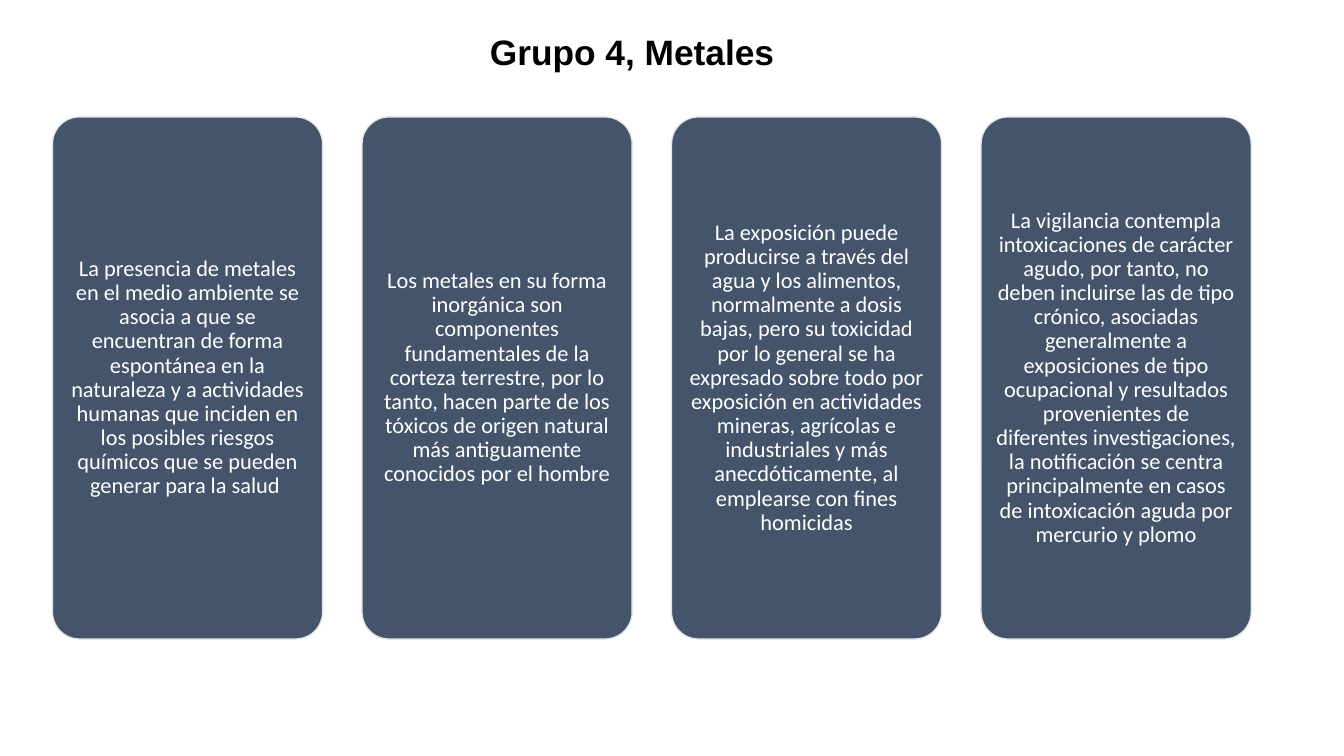
from dataclasses import dataclass

from pptx import Presentation
from pptx.dml.color import RGBColor
from pptx.enum.shapes import MSO_SHAPE
from pptx.enum.text import MSO_ANCHOR, PP_ALIGN
from pptx.util import Inches, Pt


@dataclass(frozen=True)
class Theme:
    ink: RGBColor = RGBColor.from_string("000000")
    card: RGBColor = RGBColor.from_string("44546A")
    edge: RGBColor = RGBColor.from_string("E7E6E6")
    light: RGBColor = RGBColor.from_string("FFFFFF")
    head: Pt = Pt(25.2)
    body: Pt = Pt(16)


class Deck:
    def __init__(self, theme):
        self.theme = theme
        self.show = Presentation()
        self.show.slide_width = Inches(13.33)
        self.show.slide_height = Inches(7.5)
        self.slide = self.show.slides.add_slide(self.show.slide_layouts[6])

    def label(self, shape, text, side, top, color, **style):
        """Fill a shape with one centred paragraph; side and top are insets."""
        frame = shape.text_frame
        layout = {
            "word_wrap": True,
            "vertical_anchor": MSO_ANCHOR.MIDDLE,
            "margin_left": Inches(side),
            "margin_right": Inches(side),
            "margin_top": Inches(top),
            "margin_bottom": Inches(top),
        }
        for key, value in layout.items():
            setattr(frame, key, value)
        para = frame.paragraphs[0]
        para.alignment = PP_ALIGN.CENTER
        para.line_spacing = 0.9
        run = para.add_run()
        run.text = text
        for key, value in style.items():
            setattr(run.font, key, value)
        run.font.color.rgb = color

    def title(self, text, *box):
        shape = self.slide.shapes.add_textbox(*map(Inches, box))
        self.label(shape, text, 0.1, 0.05, self.theme.ink,
                   name="Arial", size=self.theme.head, bold=True)

    def card(self, text, *box):
        shape = self.slide.shapes.add_shape(
            MSO_SHAPE.ROUNDED_RECTANGLE, *map(Inches, box))
        shape.adjustments[0] = 0.1
        shape.shadow.inherit = False
        shape.fill.solid()
        shape.fill.fore_color.rgb = self.theme.card
        shape.line.color.rgb = self.theme.edge
        shape.line.width = Pt(1)
        self.label(shape, text, 0.07, 0.07, self.theme.light,
                   name="Calibri", size=self.theme.body)


FACTS = [
    "La presencia de metales en el medio ambiente se asocia a que se "
    "encuentran de forma espontánea en la naturaleza y a actividades humanas "
    "que inciden en los posibles riesgos químicos que se pueden generar para "
    "la salud ",
    "Los metales en su forma inorgánica son componentes fundamentales de la "
    "corteza terrestre, por lo tanto, hacen parte de los tóxicos de origen "
    "natural más antiguamente conocidos por el hombre",
    "La exposición puede producirse a través del agua y los alimentos, "
    "normalmente a dosis bajas, pero su toxicidad por lo general se ha "
    "expresado sobre todo por exposición en actividades mineras, agrícolas e "
    "industriales y más anecdóticamente, al emplearse con fines homicidas",
    "La vigilancia contempla intoxicaciones de carácter agudo, por tanto, no "
    "deben incluirse las de tipo crónico, asociadas generalmente a "
    "exposiciones de tipo ocupacional y resultados provenientes de diferentes "
    "investigaciones, la notificación se centra principalmente en casos de "
    "intoxicación aguda por mercurio y plomo",
]
LEFT, STEP = 0.52, 3.07


def main():
    deck = Deck(Theme())
    deck.title("Grupo 4, Metales", LEFT, 0.28, 11.5, 0.51)
    for index, fact in enumerate(FACTS):
        deck.card(fact, LEFT + index * STEP, 1.16, 2.68, 5.18)
    deck.show.save("out.pptx")


if __name__ == "__main__":
    main()
